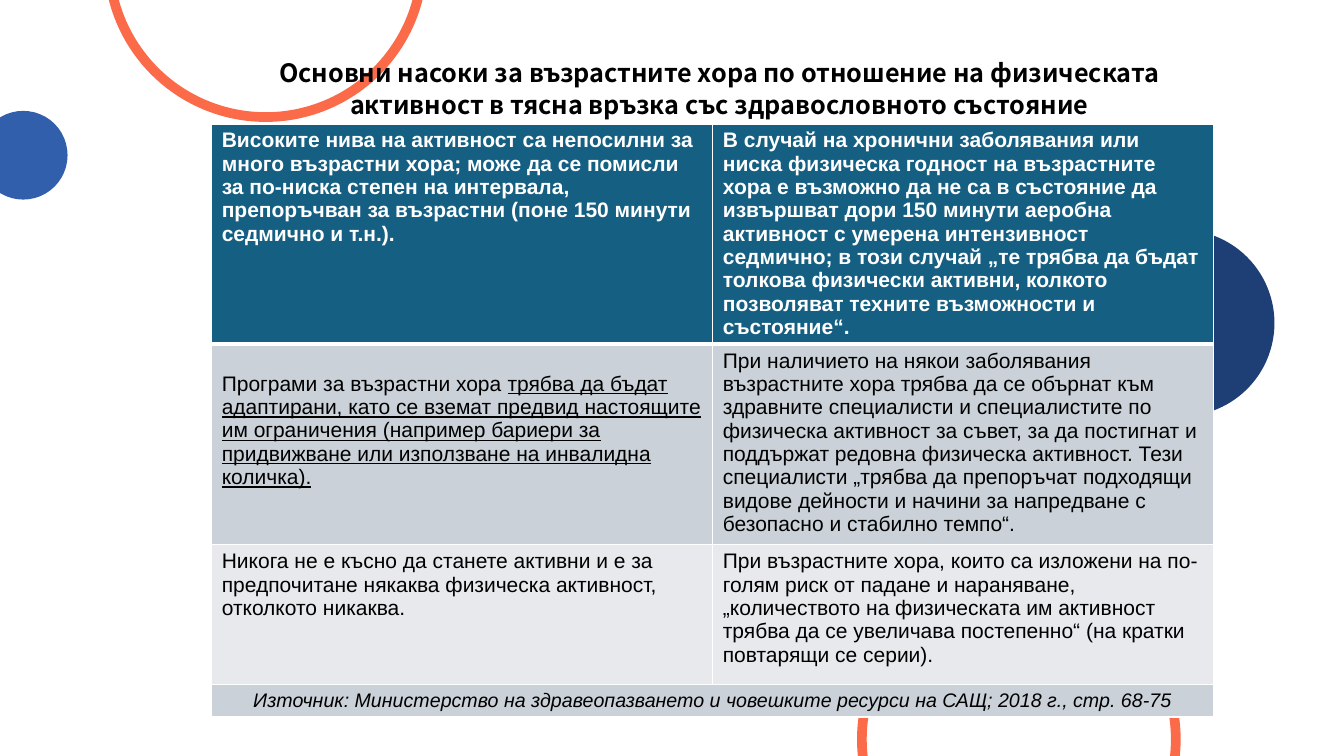
from lxml import etree
from pptx import Presentation
from pptx import util as u
from pptx.dml.color import RGBColor
from pptx.enum import shapes, text
from pptx.oxml.ns import qn

COLORS = {
    "navy": "1E3F76", "blue": "315FAB", "coral": "FB6B49", "header": "156082",
    "band_dark": "CAD1D8", "band_light": "E7E9EC", "white": "FFFFFF", "black": "000000",
}
TITLE = ("Основни насоки за възрастните хора по отношение на физическата "
         "активност в тясна връзка със здравословното състояние")
HEADERS = [
    "Високите нива на активност са непосилни за много възрастни хора; може да се помисли "
    "за по-ниска степен на интервала, препоръчван за възрастни (поне 150 минути седмично и т.н.).",
    "В случай на хронични заболявания или ниска физическа годност на възрастните хора е "
    "възможно да не са в състояние да извършват дори 150 минути аеробна активност с умерена "
    "интензивност седмично; в този случай „те трябва да бъдат толкова физически активни, "
    "колкото позволяват техните възможности и състояние“.",
]
PROGRAMS = "Програми за възрастни хора "
PROGRAMS_STRESSED = (
    "трябва да бъдат адаптирани, като се вземат предвид настоящите им ограничения "
    "(например бариери за придвижване или използване на инвалидна количка).")
SPECIALISTS = (
    "При наличието на някои заболявания възрастните хора трябва да се обърнат към здравните "
    "специалисти и специалистите по физическа активност за съвет, за да постигнат и поддържат "
    "редовна физическа активност. Тези специалисти „трябва да препоръчат подходящи видове "
    "дейности и начини за напредване с безопасно и стабилно темпо“.")
ADVICE = [
    "Никога не е късно да станете активни и е за предпочитане някаква физическа активност, "
    "отколкото никаква.",
    "При възрастните хора, които са изложени на по-голям риск от падане и нараняване, "
    "„количеството на физическата им активност трябва да се увеличава постепенно“ "
    "(на кратки повтарящи се серии).",
]
SOURCE = ("Източник: Министерство на здравеопазването и човешките ресурси на САЩ; "
          "2018 г., стр. 68-75")
ROW_HEIGHTS = [2.17, 1.99, 1.39, 0.31]
ROW_FILLS = ["header", "band_dark", "band_light", "band_dark"]


def add_round(page, kind, left, top, size, color):
    """Add a circle or ring without an outline."""
    shape = page.shapes.add_shape(kind, *map(u.Inches, (left, top, size, size)))
    shape.shadow.inherit = False
    shape.fill.solid()
    shape.fill.fore_color.rgb = RGBColor.from_string(COLORS[color])
    shape.line.fill.background()
    return shape


def add_ring(page, left, top):
    ring = add_round(page, shapes.MSO_SHAPE.DONUT, left, top, 3.21, "coral")
    ring.adjustments[0] = 0.03


def write(para, words, size=15, font="Arial", color="black", bold=False,
          italic=False, underline=False):
    span = para.add_run()
    span.text = words
    span.font.size = u.Pt(size)
    span.font.name = font
    span.font.color.rgb = RGBColor.from_string(COLORS[color])
    span.font.bold = bold
    span.font.italic = italic
    span.font.underline = underline


def style_cell(cell, fill, bottom, top):
    """Set white borders, with widths in points, and the fill."""
    properties = cell._tc.get_or_add_tcPr()
    for side, width in (("L", 1), ("R", 1), ("T", top), ("B", bottom)):
        line = etree.SubElement(properties, qn(f"a:ln{side}"), w=str(u.Pt(width)))
        solid = etree.SubElement(line, qn("a:solidFill"))
        etree.SubElement(solid, qn("a:srgbClr"), val=COLORS["white"])
    cell.fill.solid()
    cell.fill.fore_color.rgb = RGBColor.from_string(COLORS[fill])


def add_guidelines(page):
    frame = page.shapes.add_table(4, 2, *map(u.Inches, (2.1, 1.23, 9.94, sum(ROW_HEIGHTS))))
    table = frame.table
    for column in table.columns:
        column.width = u.Inches(4.97)
    for index, (height, fill) in enumerate(zip(ROW_HEIGHTS, ROW_FILLS)):
        table.rows[index].height = u.Inches(height)
        for cell in table.rows[index].cells:
            style_cell(cell, fill, bottom=3 if index == 0 else 1, top=3 if index == 1 else 1)
    table.cell(3, 0).merge(table.cell(3, 1))

    def first_para(row, column):
        return table.cell(row, column).text_frame.paragraphs[0]

    for column in range(2):
        write(first_para(0, column), HEADERS[column], color="white", bold=True)
        write(first_para(2, column), ADVICE[column])
    table.cell(1, 0).margin_top = u.Inches(0.28)
    write(first_para(1, 0), PROGRAMS)
    write(first_para(1, 0), PROGRAMS_STRESSED, underline=True)
    write(first_para(1, 1), SPECIALISTS)
    first_para(3, 0).alignment = text.PP_ALIGN.CENTER
    write(first_para(3, 0), SOURCE, size=14, italic=True)


def add_title(page):
    box = page.shapes.add_textbox(*map(u.Inches, (2.65, 0.5, 8.97, 0.74)))
    box.text_frame.word_wrap = True
    box.text_frame.auto_size = text.MSO_AUTO_SIZE.SHAPE_TO_FIT_TEXT
    para = box.text_frame.paragraphs[0]
    para.alignment = text.PP_ALIGN.CENTER
    para.line_spacing = 1.07
    write(para, TITLE, size=18, font="Noto Sans CJK KR", bold=True)


def main():
    deck = Presentation()
    deck.slide_width, deck.slide_height = u.Inches(13.33), u.Inches(7.5)
    page = deck.slides.add_slide(deck.slide_layouts[6])
    add_round(page, shapes.MSO_SHAPE.OVAL, 10.79, 2.28, 1.85, "navy")
    add_round(page, shapes.MSO_SHAPE.OVAL, -0.21, 1.1, 0.88, "blue")
    add_ring(page, 8.5, 5.73)
    add_ring(page, 1.03, -2)
    add_guidelines(page)
    add_title(page)
    deck.save("out.pptx")


if __name__ == "__main__":
    main()
